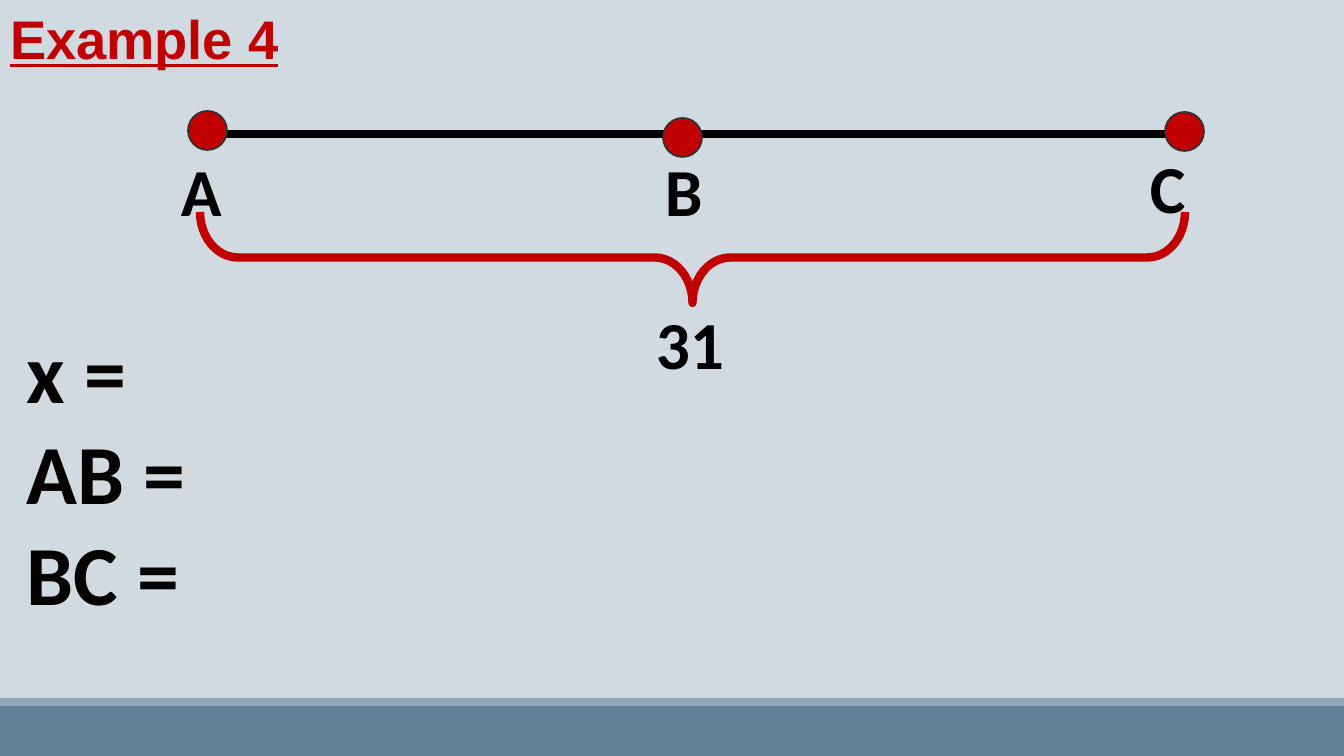
import pptx
import pptx.dml.color
import pptx.enum.shapes
import pptx.enum.text
import pptx.oxml.ns
import pptx.util
from lxml import etree

EMU_PER_PX = 914400 / 100.8
SHAPES = pptx.enum.shapes.MSO_SHAPE
RED = "C00000"
BLACK = "000000"
DOT_SIZE = 39
LABEL_SIZE = (72, 92)


def px(*lengths):
    """Turn pixel lengths into a list of EMU."""
    return [pptx.util.Emu(round(length * EMU_PER_PX)) for length in lengths]


def color(hex_code):
    return pptx.dml.color.RGBColor.from_string(hex_code)


def style_line(line, hex_code, points):
    line.color.rgb = color(hex_code)
    line.width = pptx.util.Pt(points)


def write(box, text, size, hex_code, font="Calibri", underline=None):
    """Fill a box with bold, left-aligned text, one paragraph a line."""
    frame = box.text_frame
    frame.text = text
    frame.word_wrap = True
    frame.auto_size = pptx.enum.text.MSO_AUTO_SIZE.NONE
    frame.vertical_anchor = pptx.enum.text.MSO_ANCHOR.TOP
    for para in frame.paragraphs:
        para.alignment = pptx.enum.text.PP_ALIGN.LEFT
        para.line_spacing = 1.0
        para.space_before = pptx.util.Pt(0)
        for span in para.runs:
            span.font.name = font
            span.font.size = pptx.util.Pt(size)
            span.font.bold = True
            span.font.underline = underline
            span.font.color.rgb = color(hex_code)


def add_title(page, text):
    title = page.shapes.title
    title.left, title.top, title.width, title.height = px(0, 0, 988, 76)
    write(title, text, 38.8, RED, "Arial", True)


def add_text(page, text, left, top, width, height, size, hex_code=BLACK):
    box = page.shapes.add_textbox(*px(left, top, width, height))
    write(box, text, size, hex_code)


def add_filled(page, kind, left, top, width, height, fill):
    shape = page.shapes.add_shape(kind, *px(left, top, width, height))
    shape.shadow.inherit = False
    shape.fill.solid()
    shape.fill.fore_color.rgb = color(fill)
    shape.line.fill.background()
    return shape


def add_segment(page, left, right, y):
    segment = page.shapes.add_connector(
        pptx.enum.shapes.MSO_CONNECTOR.STRAIGHT, *px(left, y, right, y))
    style_line(segment.line, BLACK, 6)
    etree.SubElement(segment._element.spPr, pptx.oxml.ns.qn("a:effectLst"))


def add_dot(page, left, top):
    dot = add_filled(page, SHAPES.OVAL, left, top, DOT_SIZE, DOT_SIZE, RED)
    style_line(dot.line, "313133", 1.25)


def add_brace_below(page, left, top, span, depth):
    """Draw a brace that opens upward, as a right brace turned by 90 degrees."""
    shift = (span - depth) / 2
    brace = page.shapes.add_shape(
        SHAPES.RIGHT_BRACE, *px(left + shift, top - shift, depth, span))
    brace.rotation = 90
    brace.adjustments[0] = 0.415
    brace.adjustments[1] = 0.5
    brace.shadow.inherit = False
    brace.fill.background()
    style_line(brace.line, RED, 6)


def main():
    deck = pptx.Presentation()
    deck.slide_width, deck.slide_height = px(1344, 756)
    page = deck.slides.add_slide(deck.slide_layouts.get_by_name("Title Only"))
    page.background.fill.solid()
    page.background.fill.fore_color.rgb = color("D1D9E1")

    add_filled(page, SHAPES.RECTANGLE, 0, 706, 1344, 50, "618197")
    add_filled(page, SHAPES.RECTANGLE, 0, 698, 1344, 8, "92A9B9")
    add_title(page, "Example 4")
    add_text(page, "x =\nAB =\nBC =", 17, 315, 182, 316, 60, "040300")

    add_segment(page, 208, 1176, 134)
    points = [
        ("A", (171, 144), (188, 111)),
        ("B", (655, 144), (663, 118)),
        ("C", (1140, 141), (1165, 112)),
    ]
    for name, label_corner, dot_corner in points:
        add_text(page, name, *label_corner, *LABEL_SIZE, 48)
        add_dot(page, *dot_corner)

    add_brace_below(page, 200, 212, 985, 91)
    add_text(page, "31", 646, 297, 93, 92, 48)
    deck.save("out.pptx")


if __name__ == "__main__":
    main()
